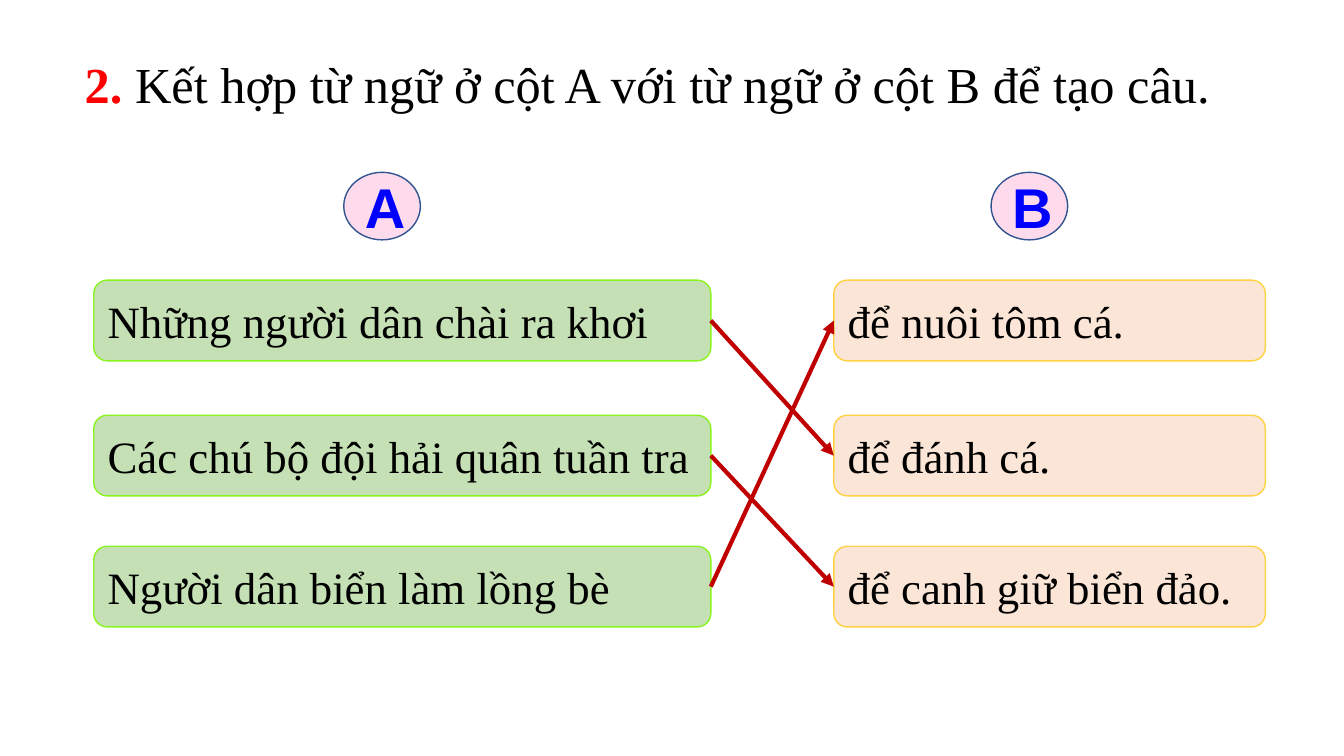
import pptx
import pptx.dml.color
import pptx.enum.shapes
import pptx.enum.text
import pptx.util
from lxml import etree
from pptx.dml.color import RGBColor
from pptx.enum.shapes import MSO_CONNECTOR, MSO_SHAPE
from pptx.enum.text import MSO_ANCHOR, PP_ALIGN
from pptx.util import Inches

BLACK = RGBColor(0x00, 0x00, 0x00)
RED = RGBColor(0xFF, 0x00, 0x00)
BLUE = RGBColor(0x00, 0x00, 0xFF)
PINK = RGBColor(0xFD, 0xDB, 0xEC)
NAVY = RGBColor(0x32, 0x54, 0x91)
GREEN = RGBColor(0xC5, 0xE0, 0xB4)
LIME = RGBColor(0x8A, 0xF4, 0x20)
PEACH = RGBColor(0xFB, 0xE5, 0xD6)
GOLD = RGBColor(0xFF, 0xD2, 0x43)
DARK_RED = RGBColor(0xC0, 0x00, 0x00)

SERIF = "Times New Roman"
LEFT_SITE, RIGHT_SITE = 1, 3
ROW_TOPS = (2.78, 4.12, 5.42)
SUBJECTS = (
    "Những người dân chài ra khơi",
    "Các chú bộ đội hải quân tuần tra",
    "Người dân biển làm lồng bè",
)
PURPOSES = ("để nuôi tôm cá.", "để đánh cá.", "để canh giữ biển đảo.")
ANSWERS = ((0, 1), (1, 2), (2, 0))


def style_font(font, name, size, color, bold=False):
    font.name = name
    font.size = pptx.util.Pt(size)
    font.color.rgb = color
    font.bold = bold


def add_question(slide, number, wording):
    question = slide.shapes.add_textbox(
        Inches(0.31), Inches(0.38), Inches(12.24), Inches(0.74)
    )
    frame = question.text_frame
    frame.word_wrap = True
    frame.margin_left = Inches(0.53)
    paragraph = frame.paragraphs[0]
    paragraph.alignment = PP_ALIGN.JUSTIFY
    paragraph.line_spacing = pptx.util.Pt(50)
    for text, color, bold in ((number, RED, True), (wording, BLACK, False)):
        run = paragraph.add_run()
        run.text = text
        style_font(run.font, SERIF, 36, color, bold)


def add_label(slide, preset, box, text, fill, outline, alignment):
    label = slide.shapes.add_shape(preset, *map(Inches, box))
    label.shadow.inherit = False
    label.fill.solid()
    label.fill.fore_color.rgb = fill
    label.line.color.rgb = outline
    label.line.width = pptx.util.Pt(1)
    frame = label.text_frame
    frame.word_wrap = True
    frame.vertical_anchor = MSO_ANCHOR.MIDDLE
    frame.text = text
    frame.paragraphs[0].alignment = alignment
    return label


def add_heading(slide, left, letter):
    heading = add_label(slide, MSO_SHAPE.OVAL, (left, 1.71, 0.76, 0.67),
                        letter, PINK, NAVY, PP_ALIGN.CENTER)
    style_font(heading.text_frame.paragraphs[0].runs[0].font, "Arial", 40, BLUE, True)


def add_column(slide, left, width, phrases, fill, outline):
    cards = []
    for top, phrase in zip(ROW_TOPS, phrases):
        card = add_label(slide, MSO_SHAPE.ROUNDED_RECTANGLE, (left, top, width, 0.8),
                         phrase, fill, outline, PP_ALIGN.LEFT)
        style_font(card.text_frame.paragraphs[0].runs[0].font, SERIF, 32, BLACK)
        cards.append(card)
    return cards


def add_answer_arrow(slide, subject, purpose):
    arrow = slide.shapes.add_connector(MSO_CONNECTOR.STRAIGHT, 0, 0, 0, 0)
    arrow.begin_connect(subject, RIGHT_SITE)
    arrow.end_connect(purpose, LEFT_SITE)
    arrow.line.color.rgb = DARK_RED
    arrow.line.width = pptx.util.Pt(3)
    head = etree.SubElement(arrow.line._get_or_add_ln(), pptx.oxml.ns.qn("a:tailEnd"))
    head.set("type", "triangle")
    etree.SubElement(arrow._element.spPr, pptx.oxml.ns.qn("a:effectLst"))


def main():
    deck = pptx.Presentation()
    deck.slide_width = Inches(13.33)
    deck.slide_height = Inches(7.5)
    slide = deck.slides.add_slide(deck.slide_layouts[6])

    add_question(slide, "2. ", "Kết hợp từ ngữ ở cột A với từ ngữ ở cột B để tạo câu.")
    add_heading(slide, 3.41, "A")
    add_heading(slide, 9.83, "B")
    subjects = add_column(slide, 0.93, 6.12, SUBJECTS, GREEN, LIME)
    purposes = add_column(slide, 8.27, 4.28, PURPOSES, PEACH, GOLD)
    for subject, purpose in ANSWERS:
        add_answer_arrow(slide, subjects[subject], purposes[purpose])

    deck.save("out.pptx")


if __name__ == "__main__":
    main()
